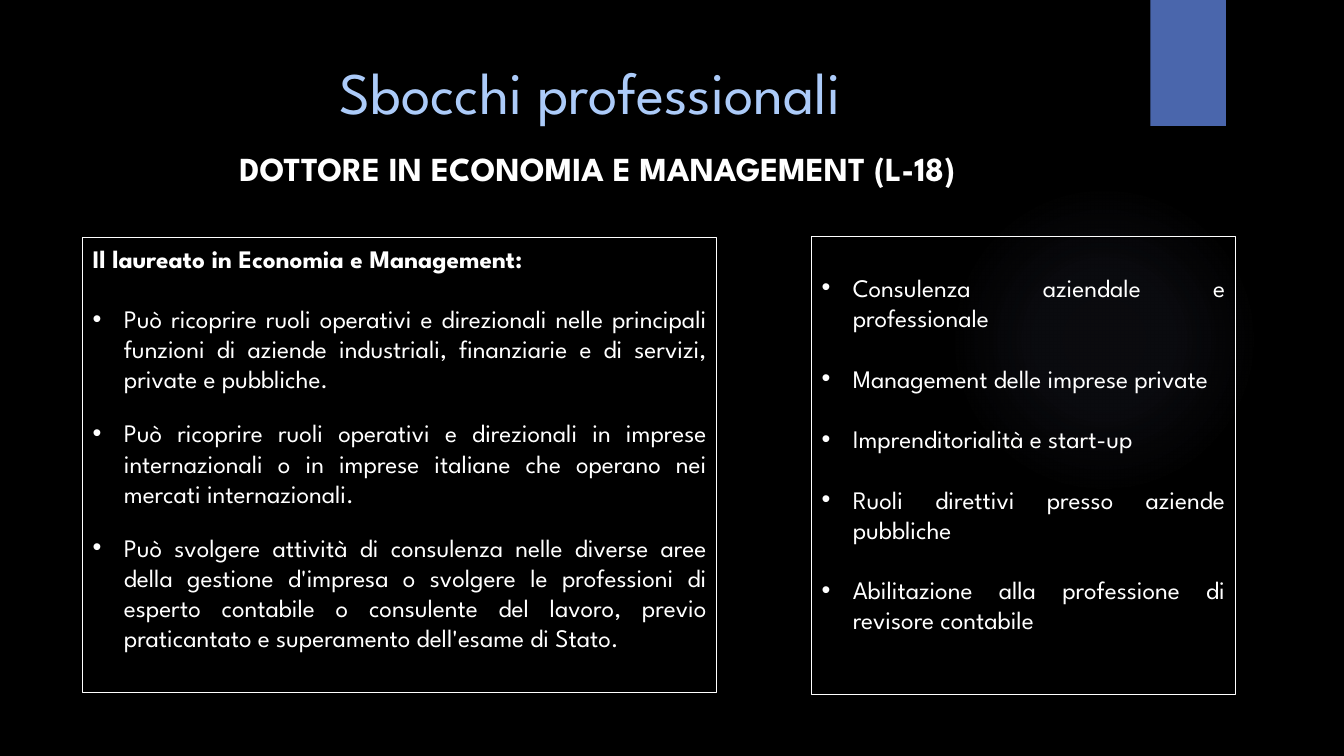
from lxml.etree import SubElement
from pptx import Presentation
from pptx.dml.color import RGBColor
from pptx.enum.shapes import MSO_SHAPE
from pptx.enum.text import MSO_ANCHOR, PP_ALIGN
from pptx.oxml import parse_xml
from pptx.oxml.ns import nsdecls, qn
from pptx.util import Inches, Pt

WHITE = "FFFFFF"
GLOW = [(0, 7), (36, 6), (69, 0)]
ROLES = [
    "Può ricoprire ruoli operativi e direzionali nelle principali funzioni di "
    "aziende industriali, finanziarie e di servizi, private e pubbliche.",
    "Può ricoprire ruoli operativi e direzionali in imprese internazionali o in "
    "imprese italiane che operano nei mercati internazionali.",
    "Può svolgere attività di consulenza nelle diverse aree della gestione "
    "d'impresa o svolgere le professioni di esperto contabile o consulente del "
    "lavoro, previo praticantato e superamento dell'esame di Stato.",
]
JOBS = [
    "Consulenza aziendale e professionale",
    "Management delle imprese private",
    "Imprenditorialità e start-up",
    "Ruoli direttivi presso aziende pubbliche",
    "Abilitazione alla professione di revisore contabile",
]


def color(text):
    """Turn a hex string into a colour."""
    return RGBColor.from_string(text)


def assign(item, values):
    """Set attributes of an item from a dict."""
    for name, value in values.items():
        setattr(item, name, value)


class Deck:
    """Hold the style and the current slide."""

    def __init__(self, font, ground):
        """Open a title-only slide with a plain ground."""
        self.font = font
        self.show = Presentation()
        assign(self.show, {"slide_width": Inches(13.33), "slide_height": Inches(7.5)})
        self.slide = self.show.slides.add_slide(self.show.slide_layouts[5])
        fill = self.slide.background.fill
        fill.solid()
        fill.fore_color.rgb = color(ground)

    def shape(self, kind, box, fill=None, line=None):
        """Add a preset shape with optional fill and line."""
        shape = self.slide.shapes.add_shape(kind, *map(Inches, box))
        shape.shadow.inherit = False
        if fill:
            shape.fill.solid()
            shape.fill.fore_color.rgb = color(fill)
        else:
            shape.fill.background()
        if line:
            shape.line.color.rgb = color(line)
            shape.line.width = Pt(0.75)
        else:
            shape.line.fill.background()
        return shape

    def glow(self, box, tint, stops):
        """Add a soft round glow that fades outward."""
        shape = self.shape(MSO_SHAPE.OVAL, box)
        marks = "".join(
            f'<a:gs pos="{place * 1000}"><a:srgbClr val="{tint}">'
            f'<a:alpha val="{alpha * 1000}"/></a:srgbClr></a:gs>'
            for place, alpha in stops)
        grad = parse_xml(
            f'<a:gradFill {nsdecls("a")}><a:gsLst>{marks}</a:gsLst>'
            '<a:path path="circle"><a:fillToRect l="50000" t="50000" '
            'r="50000" b="50000"/></a:path></a:gradFill>')
        props = shape.element.spPr
        props.replace(props.find(qn("a:noFill")), grad)

    def frame(self, shape, top=0.05):
        """Prepare the text frame of a shape."""
        frame = shape.text_frame
        assign(frame, {"word_wrap": True, "vertical_anchor": MSO_ANCHOR.TOP,
                       "margin_left": Inches(0.1), "margin_right": Inches(0.1),
                       "margin_top": Inches(top), "margin_bottom": Inches(0.05)})
        return frame

    def text(self, para, words, size, tint=WHITE, bold=False, align=PP_ALIGN.LEFT):
        """Put one styled run into a paragraph."""
        para.alignment = align
        run = para.add_run()
        run.text = words
        assign(run.font, {"name": self.font, "size": Pt(size), "bold": bold})
        run.font.color.rgb = color(tint)

    def title(self, box, words, size, tint):
        """Place and format the title."""
        shape = self.slide.shapes.title
        assign(shape, dict(zip(("left", "top", "width", "height"), map(Inches, box))))
        para = self.frame(shape).paragraphs[0]
        self.text(para, words, size, tint, align=PP_ALIGN.CENTER)

    def label(self, box, words, size):
        """Add a bold centred text box."""
        shape = self.slide.shapes.add_textbox(*map(Inches, box))
        para = self.frame(shape).paragraphs[0]
        self.text(para, words, size, bold=True, align=PP_ALIGN.CENTER)

    def panel(self, box, items, gap, head=None, top=0.05):
        """Add an outlined panel with a bullet list."""
        frame = self.frame(self.shape(MSO_SHAPE.RECTANGLE, box, line=WHITE), top)
        para = frame.paragraphs[0]
        if head:
            self.text(para, head, 18, bold=True)
        for index, item in enumerate(items):
            if index or head:
                para = frame.add_paragraph()
                para.space_before = Pt(gap if index else 21.6)
            props = para._p.get_or_add_pPr()
            props.set("marL", str(Inches(0.31)))
            props.set("indent", str(-Inches(0.31)))
            SubElement(props, qn("a:buFont"), typeface="Arial")
            SubElement(props, qn("a:buChar"), char="•")
            self.text(para, item, 18, align=PP_ALIGN.JUSTIFY)


def main():
    """Build and save the slide."""
    deck = Deck("League Spartan", "000000")
    deck.glow((9.41, 1.83, 3.08, 3.08), "9297CF", GLOW)
    deck.shape(MSO_SHAPE.RECTANGLE, (11.41, 0, 0.75, 1.25), "4A66AC")
    deck.title((0.71, 0.5, 10.29, 1.53), "Sbocchi professionali", 42, "ACCBF9")
    deck.panel((0.82, 2.36, 6.29, 4.51), ROLES, 16.8,
               head="Il laureato in Economia e Management:")
    deck.label((0.71, 1.42, 10.43, 0.5), "DOTTORE IN ECONOMIA E MANAGEMENT (L-18)", 24)
    deck.panel((8.05, 2.35, 4.2, 4.54), JOBS, 21.6, top=0.35)
    deck.show.save("out.pptx")


if __name__ == "__main__":
    main()
